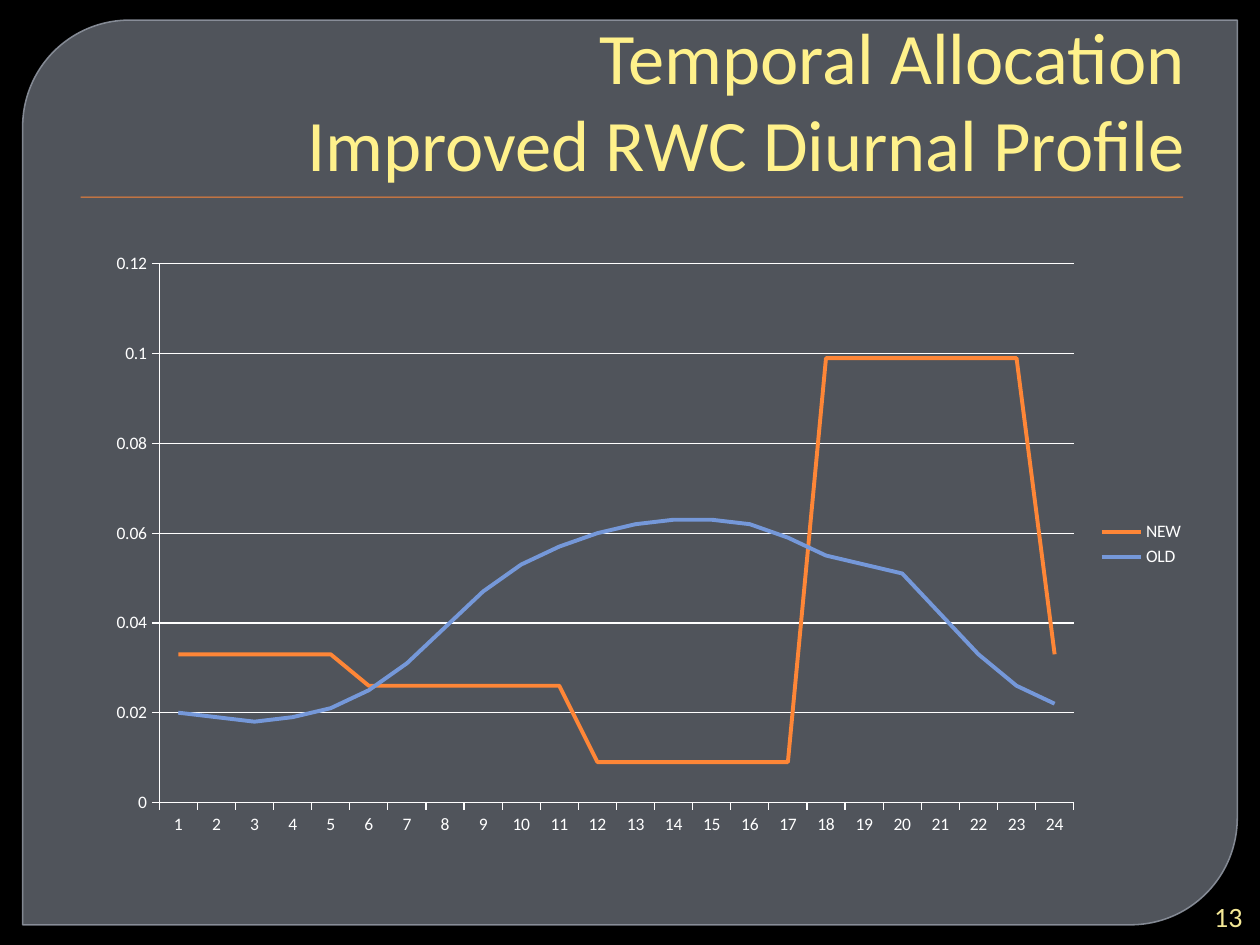
import pptx
import pptx.util
import pptx.chart.data
import pptx.dml.color
import pptx.enum.chart
import pptx.enum.shapes
import pptx.enum.text
import pptx.oxml
import pptx.oxml.ns
from pptx.util import Inches

NEW = [0.033] * 5 + [0.026] * 6 + [0.009] * 6 + [0.099] * 6 + [0.033]
OLD = [0.02, 0.019, 0.018, 0.019, 0.021, 0.025, 0.031, 0.039,
       0.047, 0.053, 0.057, 0.06, 0.062, 0.063, 0.063, 0.062,
       0.059, 0.055, 0.053, 0.051, 0.042, 0.033, 0.026, 0.022]


def color(code):
    return pptx.dml.color.RGBColor.from_string(code)


def fade(item, shares):
    tints = item._element.spPr.iter(pptx.oxml.ns.qn("a:srgbClr"))
    for tint, share in zip(tints, shares):
        tint.append(pptx.oxml.parse_xml(
            f'<a:alpha {pptx.oxml.ns.nsdecls("a")} val="{share * 1000}"/>'))


class Deck:
    """Holds the style and the current slide."""

    font = "Calibri"
    pale = "FFF18B"
    white = "FFFFFF"

    def __init__(self):
        self.file = pptx.Presentation()
        self.file.slide_width = Inches(10)
        self.file.slide_height = Inches(7.5)
        self.slide = self.file.slides.add_slide(self.file.slide_layouts[5])
        self.paint(self.slide.background.fill, "000000")

    def paint(self, fill, code):
        fill.solid()
        fill.fore_color.rgb = color(code)

    def style(self, font, size, code):
        font.name = self.font
        font.size = pptx.util.Pt(size)
        font.color.rgb = color(code)

    def stroke(self, line, code, width):
        line.color.rgb = color(code)
        line.width = pptx.util.Pt(width)

    def shape(self, kind, box, code):
        item = self.slide.shapes.add_shape(kind, *map(Inches, box))
        item.shadow.inherit = False
        self.paint(item.fill, code)
        item.line.fill.background()
        return item

    def panel(self, box):
        kind = pptx.enum.shapes.MSO_SHAPE.ROUND_2_DIAG_RECTANGLE
        item = self.shape(kind, box, "7C828D")
        item.adjustments[0] = 0.118
        item.adjustments[1] = 0
        self.stroke(item.line, "9096A1", 0.87)
        fade(item, (65, 88))

    def rule(self, box):
        self.shape(pptx.enum.shapes.MSO_SHAPE.RECTANGLE, box, "FE8637")

    def label(self, item, words, size, code, anchor):
        frame = item.text_frame
        frame.text = words
        frame.word_wrap = True
        frame.auto_size = pptx.enum.text.MSO_AUTO_SIZE.NONE
        frame.vertical_anchor = anchor
        para = frame.paragraphs[0]
        para.alignment = pptx.enum.text.PP_ALIGN.RIGHT
        self.style(para.font, size, code)

    def title(self, words, box):
        item = self.slide.shapes.title
        item.left, item.top, item.width, item.height = map(Inches, box)
        self.label(item, words, 41.4, self.pale,
                   pptx.enum.text.MSO_ANCHOR.BOTTOM)
        item._element.getparent().append(item._element)

    def number(self, words, box):
        item = self.slide.shapes.add_textbox(*map(Inches, box))
        self.label(item, words, 16, "F4E896",
                   pptx.enum.text.MSO_ANCHOR.MIDDLE)

    def chart(self, box, cats, rows):
        data = pptx.chart.data.CategoryChartData()
        data.categories = cats
        for name, vals, code in rows:
            data.add_series(name, vals)
        chart = self.slide.shapes.add_chart(
            pptx.enum.chart.XL_CHART_TYPE.LINE,
            *map(Inches, box), data).chart
        chart.has_title = False
        self.style(chart.font, 10, self.white)
        chart.has_legend = True
        chart.legend.position = pptx.enum.chart.XL_LEGEND_POSITION.RIGHT
        chart.legend.include_in_layout = False
        chart.plots[0].vary_by_categories = False
        for line, (name, vals, code) in zip(chart.plots[0].series, rows):
            line.smooth = False
            line.marker.style = pptx.enum.chart.XL_MARKER_STYLE.NONE
            self.stroke(line.format.line, code, 2.25)
        for axis in (chart.category_axis, chart.value_axis):
            axis.major_tick_mark = pptx.enum.chart.XL_TICK_MARK.OUTSIDE
            self.stroke(axis.format.line, self.white, 0.75)
        scale = chart.value_axis
        scale.minimum_scale, scale.maximum_scale = 0, 0.12
        scale.major_unit = 0.02
        scale.has_major_gridlines = True
        self.stroke(scale.major_gridlines.format.line, self.white, 0.75)


def main():
    deck = Deck()
    deck.panel((0.18, 0.16, 9.64, 7.18))
    deck.rule((0.64, 1.56, 8.75, 0.01))
    deck.title("Temporal Allocation\vImproved RWC Diurnal Profile",
               (0.5, 0.28, 9, 1.25))
    deck.number("13", (9.45, 7.12, 0.51, 0.3))
    deck.chart((0.75, 1.92, 8.75, 4.8), [str(hour) for hour in range(1, 25)],
               [("NEW", NEW, "FE8637"), ("OLD", OLD, "7598D9")])
    deck.file.save("out.pptx")


if __name__ == "__main__":
    main()
